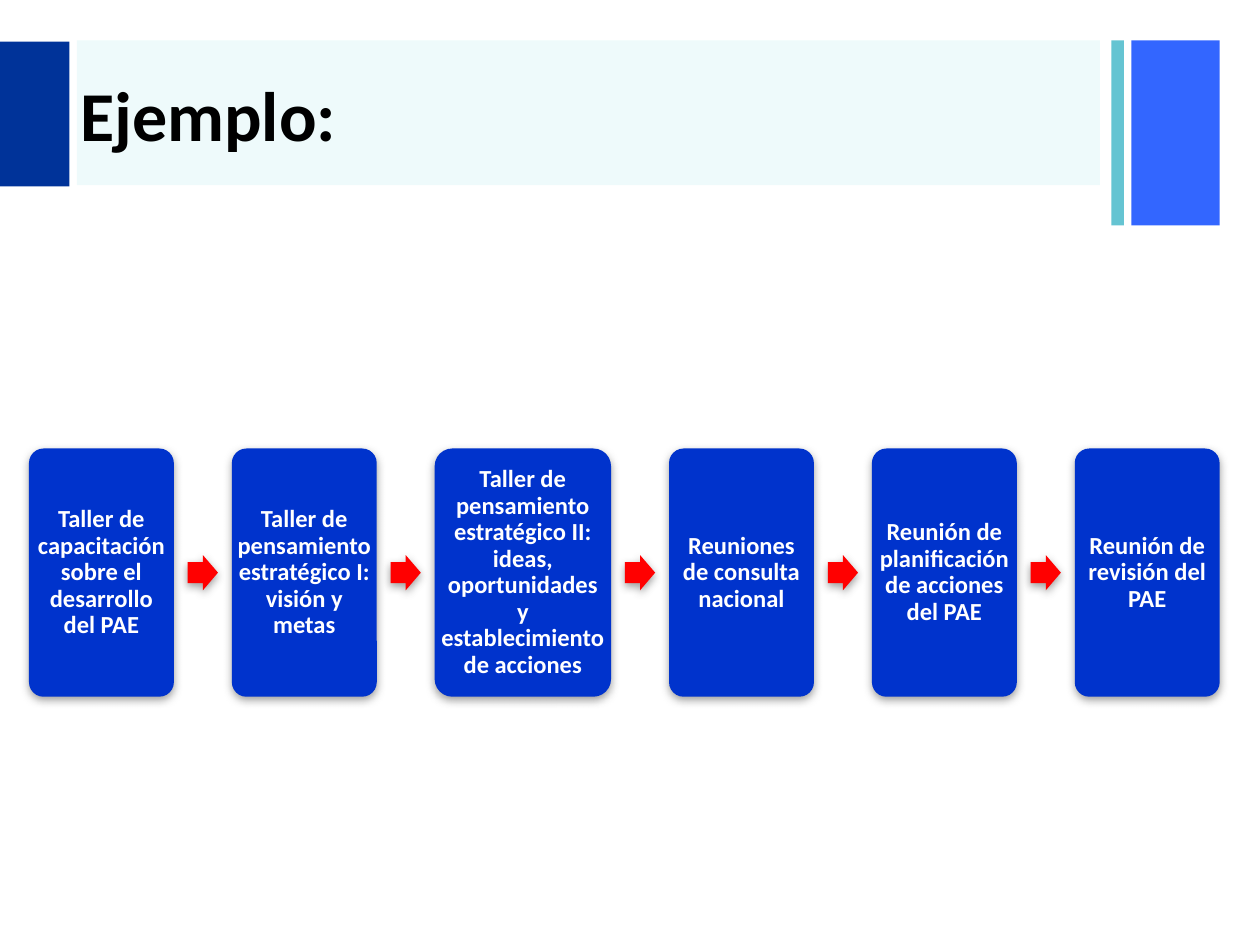
from lxml.etree import SubElement
from pptx import Presentation
from pptx.dml.color import RGBColor
from pptx.enum.shapes import MSO_SHAPE
from pptx.enum.text import MSO_ANCHOR, PP_ALIGN
from pptx.oxml.ns import qn
from pptx.util import Inches, Pt

TITLE = "Ejemplo:"
# text and box width in inches
STEPS = [
    ("Taller de capacitación sobre el desarrollo del PAE", 1.15),
    ("Taller de pensamiento estratégico I: visión y metas", 1.15),
    ("Taller de pensamiento estratégico II: ideas, oportunidades y "
     "establecimiento de acciones", 1.4),
    ("Reuniones de consulta nacional", 1.15),
    ("Reunión de planificación de acciones del PAE", 1.15),
    ("Reunión de revisión del PAE", 1.15),
]
# left, top, width, height, colour, opacity in percent
HEADER_BARS = [
    (8.98, 0.32, 0.7, 1.47, "3366FF", 100),
    (8.82, 0.32, 0.1, 1.47, "65C4D2", 100),
    (0.61, 0.32, 8.12, 1.15, "14C5D0", 7),
    (0, 0.33, 0.55, 1.15, "003399", 100),
]
THEME = {
    "font": "Calibri",
    "title": {"size": 40, "color": "000000"},
    "step": {"size": 14, "color": "FFFFFF"},
    "box": "0033CC",
    "arrow": "FF0000",
    "shadow": "808080",
}
FLOW_LEFT, BOX_TOP, BOX_HEIGHT = 0.23, 3.56, 1.97
GAP, ARROW_OFFSET = 0.46, 0.11
ARROW_WIDTH, ARROW_HEIGHT = 0.24, 0.28


def add_filled_shape(slide, kind, place, color, adjustments=()):
    shape = slide.shapes.add_shape(kind, *map(Inches, place))
    shape.shadow.inherit = False
    shape.fill.solid()
    shape.fill.fore_color.rgb = RGBColor.from_string(color)
    shape.line.fill.background()
    for index, value in enumerate(adjustments):
        shape.adjustments[index] = value
    return shape


def add_color_alpha(color_element, percent):
    SubElement(color_element, qn("a:alpha"), val=str(percent * 1000))


def add_shadow(shape):
    """Add a soft shadow falling straight down."""
    effects = shape.element.spPr.find(qn("a:effectLst"))
    shadow = SubElement(effects, qn("a:outerShdw"), blurRad=str(Pt(5)),
                        dist=str(Pt(2)), dir="5400000", rotWithShape="0")
    color = SubElement(shadow, qn("a:srgbClr"), val=THEME["shadow"])
    add_color_alpha(color, 75)


def write_text(shape, text, style, frame_format, paragraph_format):
    frame = shape.text_frame
    for name, value in frame_format.items():
        setattr(frame, name, value)
    paragraph = frame.paragraphs[0]
    for name, value in paragraph_format.items():
        setattr(paragraph, name, value)
    run = paragraph.add_run()
    run.text = text
    font_format = {"name": THEME["font"], "size": Pt(style["size"]), "bold": True}
    for name, value in font_format.items():
        setattr(run.font, name, value)
    run.font.color.rgb = RGBColor.from_string(style["color"])


def add_header(slide):
    for *place, color, opacity in HEADER_BARS:
        bar = add_filled_shape(slide, MSO_SHAPE.RECTANGLE, place, color)
        if opacity < 100:
            add_color_alpha(bar.element.spPr.find(".//" + qn("a:srgbClr")), opacity)
    title = slide.shapes.add_textbox(*map(Inches, (0.54, 0.34, 8.27, 1.12)))
    write_text(title, TITLE, THEME["title"],
               {"word_wrap": True, "vertical_anchor": MSO_ANCHOR.MIDDLE},
               {"alignment": PP_ALIGN.LEFT})


def add_flow(slide):
    frame_format = {
        "word_wrap": True, "vertical_anchor": MSO_ANCHOR.MIDDLE,
        "margin_left": 0, "margin_right": 0,
        "margin_top": Inches(0.06), "margin_bottom": Inches(0.06),
    }
    paragraph_format = {"alignment": PP_ALIGN.CENTER, "line_spacing": 0.9}
    arrow_top = BOX_TOP + (BOX_HEIGHT - ARROW_HEIGHT) / 2
    left = FLOW_LEFT
    for number, (text, width) in enumerate(STEPS, start=1):
        box = add_filled_shape(slide, MSO_SHAPE.ROUNDED_RECTANGLE,
                               (left, BOX_TOP, width, BOX_HEIGHT),
                               THEME["box"], [0.1])
        add_shadow(box)
        write_text(box, text, THEME["step"], frame_format, paragraph_format)
        if number < len(STEPS):
            arrow = add_filled_shape(
                slide, MSO_SHAPE.RIGHT_ARROW,
                (left + width + ARROW_OFFSET, arrow_top, ARROW_WIDTH, ARROW_HEIGHT),
                THEME["arrow"], [0.6, 0.5])
            add_shadow(arrow)
        left += width + GAP


def main():
    presentation = Presentation()
    presentation.slide_width = Inches(10)
    presentation.slide_height = Inches(7.5)
    slide = presentation.slides.add_slide(presentation.slide_layouts[6])
    add_header(slide)
    add_flow(slide)
    presentation.save("out.pptx")


if __name__ == "__main__":
    main()
